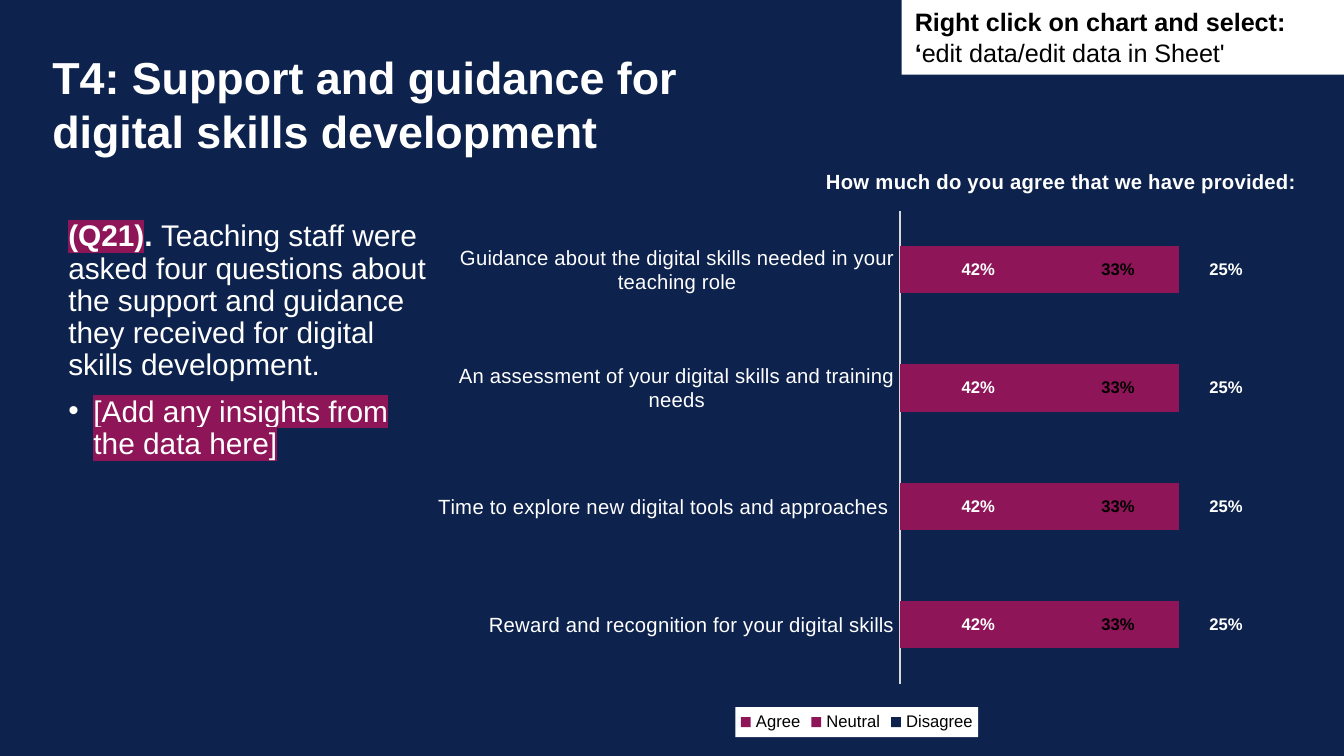
from pptx import Presentation
from pptx.chart import data
from pptx.dml import color
from pptx.enum import chart as ec, shapes, text
from pptx.oxml import parse_xml
from pptx.oxml.ns import nsdecls, qn
from pptx.util import Pt

NAVY, PLUM, WHITE, BLACK, GREY = "0D224C", "8E1558", "FFFFFF", "000000", "D9D9D9"
CATEGORIES = [
    "Guidance about the digital skills needed in your teaching role",
    "An assessment of your digital skills and training needs",
    "Time to explore new digital tools and approaches ",
    "Reward and recognition for your digital skills",
]
SERIES = [
    ("Agree", 0.42, PLUM, WHITE),
    ("Neutral", 0.33, PLUM, BLACK),
    ("Disagree", 0.25, NAVY, WHITE),
]


def rgb(value):
    """Turn a hex string into a colour."""
    return color.RGBColor.from_string(value)


def paint(fill, value):
    """Make a fill solid in one colour."""
    fill.solid()
    fill.fore_color.rgb = rgb(value)


def style(font, size, value, bold=False):
    """Format a font."""
    font.name, font.size, font.bold = "Arial", Pt(size), bold
    font.color.rgb = rgb(value)


def add_run(p, words, size, value, bold=False, highlight=None):
    """Append a formatted run, highlighted if asked."""
    r = p.add_run()
    r.text = words
    style(r.font, size, value, bold)
    if highlight:
        r.font._element.find(qn("a:solidFill")).addnext(parse_xml(
            f'<a:highlight {nsdecls("a")}><a:srgbClr val="{highlight}"/></a:highlight>'))


def set_layout(parent, index, target=None, **fractions):
    """Place a chart part by fractions of the chart area."""
    for old in parent.findall(qn("c:layout")):
        parent.remove(old)
    inner = f'<c:layoutTarget val="{target}"/>' if target else ""
    inner += '<c:xMode val="edge"/><c:yMode val="edge"/>'
    inner += "".join(f'<c:{k} val="{v}"/>' for k, v in fractions.items())
    parent.insert(index, parse_xml(
        f'<c:layout {nsdecls("c")}><c:manualLayout>{inner}</c:manualLayout></c:layout>'))


def add_title(s, x, y, w, h):
    """Place and format the slide title."""
    sp = s.shapes.title
    sp.left, sp.top, sp.width, sp.height = Pt(x), Pt(y), Pt(w), Pt(h)
    tf = sp.text_frame
    tf.text = "T4: Support and guidance for digital skills development"
    tf.margin_left = tf.margin_top = tf.margin_right = tf.margin_bottom = 0
    tf.vertical_anchor = text.MSO_ANCHOR.TOP
    tf.auto_size = text.MSO_AUTO_SIZE.NONE
    p = tf.paragraphs[0]
    p.alignment, p.line_spacing = text.PP_ALIGN.LEFT, 1.0
    style(p.runs[0].font, 24, WHITE, True)


def add_findings(s, x, y, w, h):
    """Add the question summary and its bullet."""
    tf = s.shapes.add_textbox(Pt(x), Pt(y), Pt(w), Pt(h)).text_frame
    tf.word_wrap = True
    p = tf.paragraphs[0]
    p.line_spacing = 0.9
    add_run(p, "(Q21)", 16, WHITE, True, PLUM)
    add_run(p, ". ", 16, WHITE, True)
    add_run(p, "Teaching staff were asked four questions about the support and "
               "guidance they received for digital skills development.", 16, WHITE)
    p = tf.add_paragraph()
    p.line_spacing, p.space_before = 0.9, Pt(7.5)
    pPr = p._p.get_or_add_pPr()
    pPr.set("marL", str(Pt(13.5)))
    pPr.set("indent", str(-Pt(13.5)))
    pPr.append(parse_xml(f'<a:buFont {nsdecls("a")} typeface="Arial"/>'))
    pPr.append(parse_xml(f'<a:buChar {nsdecls("a")} char="•"/>'))
    add_run(p, "[Add any insights from the data here]", 16, WHITE, highlight=PLUM)


def add_agreement_chart(s, x, y, w, h):
    """Add the stacked bar chart of agreement."""
    cd = data.CategoryChartData(number_format="0%")
    cd.categories = CATEGORIES
    for name, value, *_ in SERIES:
        cd.add_series(name, [value] * len(CATEGORIES))
    chart = s.shapes.add_chart(ec.XL_CHART_TYPE.BAR_STACKED,
                               Pt(x), Pt(y), Pt(w), Pt(h), cd).chart
    style(chart.font, 10, BLACK)

    chart.has_title = True
    tf = chart.chart_title.text_frame
    tf.text = "How much do you agree that we have provided:"
    style(tf.paragraphs[0].runs[0].font, 11, WHITE, True)
    set_layout(chart.chart_title._element, 1, x=0.46, y=0.03)

    axis = chart.category_axis
    axis.reverse_order = True
    axis.major_tick_mark = axis.minor_tick_mark = ec.XL_TICK_MARK.NONE
    style(axis.tick_labels.font, 11, WHITE)
    axis.format.line.color.rgb = rgb(GREY)
    axis.format.line.width = Pt(1)
    axis = chart.value_axis
    axis.minimum_scale, axis.maximum_scale = 0, 1
    axis.has_major_gridlines = axis.visible = False

    plot = chart.plots[0]
    plot.gap_width, plot.overlap, plot.vary_by_categories = 150, 100, False
    for series, (_, _, fill, label) in zip(plot.series, SERIES):
        paint(series.format.fill, fill)
        labels = series.data_labels
        labels.show_value = True
        labels.number_format, labels.number_format_is_linked = "0%", False
        style(labels.font, 9, label, True)
    set_layout(chart._chartSpace.chart.plotArea, 0, "inner", x=0.55, y=0.11, w=0.43, h=0.8)

    chart.has_legend = True
    legend = chart.legend
    legend.position, legend.include_in_layout = ec.XL_LEGEND_POSITION.BOTTOM, False
    style(legend.font, 9, BLACK)
    legend._element.find(qn("c:txPr")).addprevious(parse_xml(
        f'<c:spPr {nsdecls("c", "a")}><a:solidFill><a:srgbClr val="{WHITE}"/>'
        '</a:solidFill></c:spPr>'))


def add_instruction(s, x, y, w, h):
    """Add the white editing instruction."""
    sp = s.shapes.add_shape(shapes.MSO_SHAPE.RECTANGLE, Pt(x), Pt(y), Pt(w), Pt(h))
    sp.shadow.inherit = False
    paint(sp.fill, WHITE)
    sp.line.fill.background()
    tf = sp.text_frame
    tf.word_wrap = True
    tf.vertical_anchor = text.MSO_ANCHOR.TOP
    p = tf.paragraphs[0]
    p.alignment = text.PP_ALIGN.LEFT
    add_run(p, "Right click on chart and select: ‘", 13.5, BLACK, True)
    add_run(p, "edit data/edit data in Sheet'", 13.5, BLACK)


def main():
    """Build and save the slide."""
    prs = Presentation()
    prs.slide_width, prs.slide_height = Pt(720), Pt(405)
    s = prs.slides.add_slide(prs.slide_layouts[5])
    paint(s.background.fill, NAVY)
    add_title(s, 28, 26.5, 409, 26.5)
    add_findings(s, 29.5, 115, 207, 238)
    add_agreement_chart(s, 227, 78, 469.5, 317)
    add_instruction(s, 483, 0, 237, 40)
    prs.save("out.pptx")


if __name__ == "__main__":
    main()
